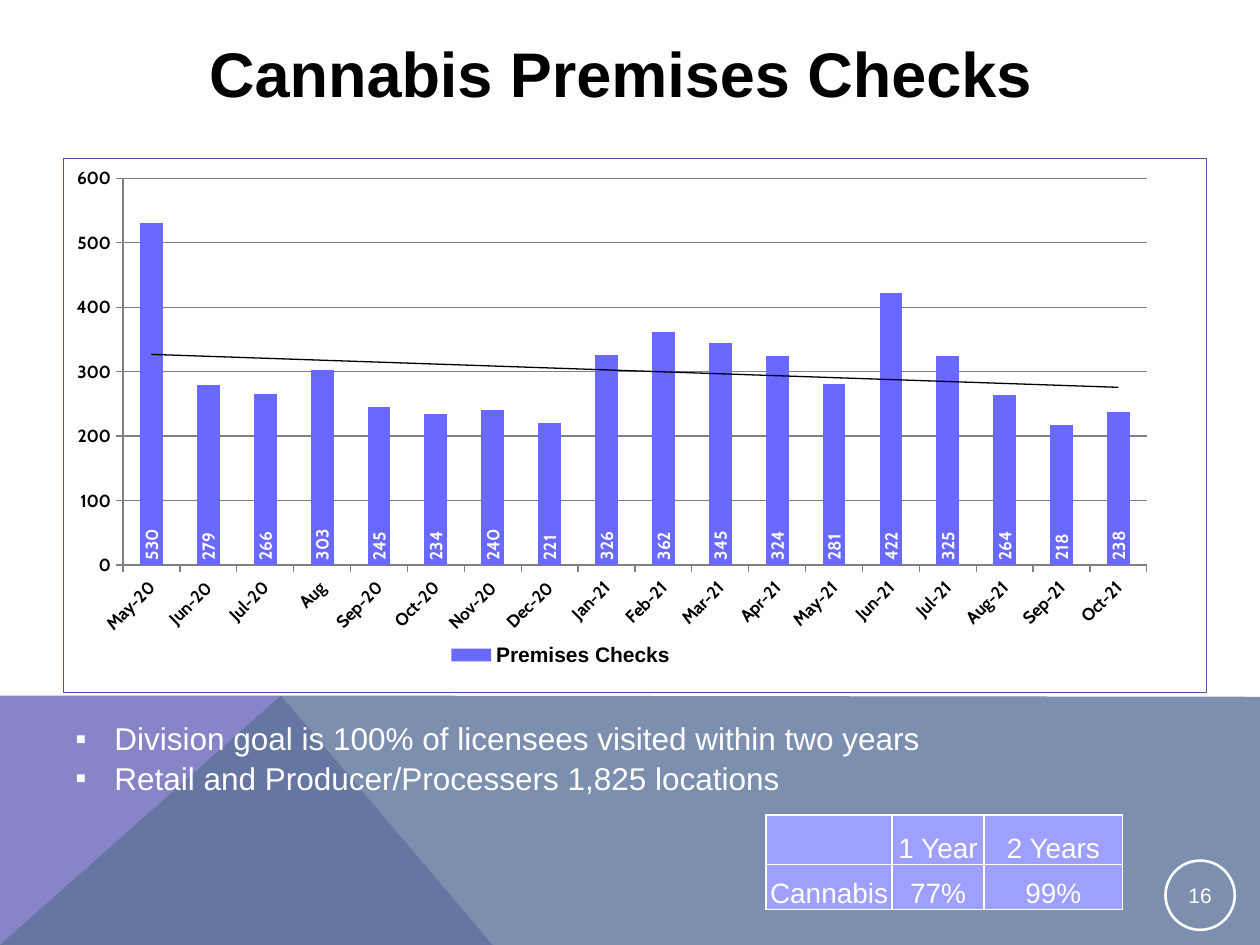
"""Build the cannabis premises checks slide."""
from lxml import etree
from pptx import Presentation
from pptx import util as u
from pptx.chart import data as chart_data
from pptx.dml.color import RGBColor
from pptx.enum import chart as ch, shapes, text
from pptx.oxml import parse_xml
from pptx.oxml.ns import nsdecls, qn

COLORS = {
    "black": "000000", "white": "FFFFFF", "violet": "8784C7", "slate": "5D739A",
    "bar": "6969FF", "cell": "9F9FFF", "border": "524EAB", "grid": "808080",
}
MONTHS = ["May-20", "Jun-20", "Jul-20", "Aug", "Sep-20", "Oct-20", "Nov-20", "Dec-20", "Jan-21",
          "Feb-21", "Mar-21", "Apr-21", "May-21", "Jun-21", "Jul-21", "Aug-21", "Sep-21", "Oct-21"]
CHECKS = [530, 279, 266, 303, 245, 234, 240, 221, 326, 362, 345, 324, 281, 422, 325, 264, 218, 238]
GOALS = ["Division goal is 100% of licensees visited within two years",
         "Retail and Producer/Processers 1,825 locations"]
RATES = [["", "1 Year", "2 Years"], ["Cannabis", "77%", "99%"]]


def color(name):
    return RGBColor.from_string(COLORS[name])


def style_font(font, size, tone, bold=False, name="Arial"):
    font.size, font.bold, font.name = u.Pt(size), bold, name
    font.color.rgb = color(tone)


def write(para, words, size=18, tone="white", bold=False, align=text.PP_ALIGN.CENTER):
    para.alignment = align
    span = para.add_run()
    span.text = words
    style_font(span.font, size, tone, bold)


def set_margins(holder, side, bottom):
    holder.margin_left = holder.margin_right = holder.margin_top = u.Inches(side)
    holder.margin_bottom = u.Inches(bottom)


def rotate_text(part, degrees):
    body = part.find(qn("c:txPr")).find(qn("a:bodyPr"))
    body.set("rot", str(degrees * 60000))
    body.set("vert", "horz")


def chart_layout(x, y, w, h, inner=False):
    target = '<c:layoutTarget val="inner"/>' if inner else ""
    modes = '<c:xMode val="edge"/><c:yMode val="edge"/>'
    sizes = "".join(f'<c:{key} val="{value}"/>' for key, value in zip("xywh", (x, y, w, h)))
    return parse_xml(f'<c:layout {nsdecls("c")}><c:manualLayout>{target}{modes}{sizes}'
                     '</c:manualLayout></c:layout>')


class SlideBuilder:
    """Hold the deck style and the current slide."""

    def __init__(self):
        self.deck = Presentation()
        self.deck.slide_width, self.deck.slide_height = u.Inches(10), u.Inches(7.5)
        self.page = self.deck.slides.add_slide(self.deck.slide_layouts[5])

    def title(self, words, *place):
        box = self.page.shapes.title
        box.left, box.top, box.width, box.height = map(u.Inches, place)
        box.text_frame.auto_size = text.MSO_AUTO_SIZE.NONE
        box.text_frame.vertical_anchor = text.MSO_ANCHOR.MIDDLE
        write(box.text_frame.paragraphs[0], words, 36, "black", True)

    def polygon(self, points, tone, opacity=100):
        corners = [(u.Inches(x), u.Inches(y)) for x, y in points]
        outline = self.page.shapes.build_freeform(*corners[0])
        outline.add_line_segments(corners[1:], close=True)
        shape = outline.convert_to_shape()
        shape.shadow.inherit = False
        shape.fill.solid()
        shape.fill.fore_color.rgb = color(tone)
        shape.line.fill.background()
        if opacity < 100:
            tint = shape.fill._xPr.find(qn("a:solidFill"))[0]
            etree.SubElement(tint, qn("a:alpha")).set("val", str(opacity * 1000))

    def badge(self, words, *place):
        shape = self.page.shapes.add_shape(shapes.MSO_SHAPE.OVAL, *map(u.Inches, place))
        shape.shadow.inherit = False
        shape.fill.background()
        shape.line.color.rgb, shape.line.width = color("white"), u.Pt(1.5)
        frame = shape.text_frame
        frame.vertical_anchor = text.MSO_ANCHOR.MIDDLE
        set_margins(frame, 0.01, 0.01)
        write(frame.paragraphs[0], words, 12)

    def bullets(self, lines, *place):
        frame = self.page.shapes.add_textbox(*map(u.Inches, place)).text_frame
        frame.word_wrap = True
        for index, line in enumerate(lines):
            para = frame.add_paragraph() if index else frame.paragraphs[0]
            props = para._p.get_or_add_pPr()
            props.set("marL", str(u.Inches(0.31)))
            props.set("indent", str(u.Inches(-0.31)))
            etree.SubElement(props, qn("a:buFont")).set("typeface", "Arial")
            etree.SubElement(props, qn("a:buChar")).set("char", "▪")
            if index:
                para.space_before = u.Pt(1)
            write(para, line, align=text.PP_ALIGN.LEFT)

    def table(self, rows, widths, heights, *place):
        frame = self.page.shapes.add_table(len(rows), len(widths), *map(u.Inches, place))
        grid = frame.table
        grid.first_row = grid.horz_banding = False
        for column, width in zip(grid.columns, widths):
            column.width = u.Inches(width)
        for row, height, values in zip(grid.rows, heights, rows):
            row.height = u.Inches(height)
            for cell, value in zip(row.cells, values):
                self.cell(cell, value)

    def cell(self, cell, value):
        cell.vertical_anchor = text.MSO_ANCHOR.BOTTOM
        set_margins(cell, 0.01, 0)
        if value:
            write(cell.text_frame.paragraphs[0], value, 16)
        props = cell._tc.get_or_add_tcPr()
        for side in ("lnL", "lnR", "lnT", "lnB"):
            props.append(parse_xml(
                f'<a:{side} {nsdecls("a")} w="12700"><a:solidFill>'
                f'<a:srgbClr val="{COLORS["white"]}"/></a:solidFill></a:{side}>'))
        cell.fill.solid()
        cell.fill.fore_color.rgb = color("cell")

    def chart(self, name, months, values, *place):
        data = chart_data.CategoryChartData()
        data.categories = months
        data.add_series(name, values)
        chart = self.page.shapes.add_chart(
            ch.XL_CHART_TYPE.COLUMN_CLUSTERED, *map(u.Inches, place), data).chart
        style_font(chart.font, 10, "black", name="Cabin")
        chart.has_title = False
        self.axes(chart)
        self.series(chart.plots[0])
        self.legend(chart)
        area = chart._chartSpace.chart.plotArea
        for old in area.findall(qn("c:layout")):
            area.remove(old)
        area.insert(0, chart_layout(0.052, 0.038, 0.896, 0.724, inner=True))
        chart._chartSpace.chart.addnext(parse_xml(
            f'<c:spPr {nsdecls("c", "a")}><a:noFill/><a:ln w="9525"><a:solidFill>'
            f'<a:srgbClr val="{COLORS["border"]}"/></a:solidFill></a:ln></c:spPr>'))

    def axes(self, chart):
        for axis in (chart.category_axis, chart.value_axis):
            style_font(axis.tick_labels.font, 10, "black", True, "Cabin")
            axis.major_tick_mark = ch.XL_TICK_MARK.OUTSIDE
            axis.format.line.color.rgb = color("grid")
        rotate_text(chart.category_axis._element, -45)
        scale = chart.value_axis
        scale.minimum_scale, scale.maximum_scale, scale.major_unit = 0, 600, 100
        scale.major_gridlines.format.line.color.rgb = color("grid")

    def series(self, plot):
        plot.gap_width, plot.vary_by_categories = 150, False
        bars = plot.series[0]
        bars.format.fill.solid()
        bars.format.fill.fore_color.rgb = color("bar")
        labels = bars.data_labels
        labels.show_value = True
        labels.position = ch.XL_LABEL_POSITION.INSIDE_BASE
        style_font(labels.font, 10, "white", True, "Cabin")
        rotate_text(labels._element, -90)
        bars._element.find(qn("c:cat")).addprevious(parse_xml(
            f'<c:trendline {nsdecls("c", "a")}><c:spPr><a:ln w="9525"><a:solidFill>'
            f'<a:srgbClr val="{COLORS["black"]}"/></a:solidFill></a:ln></c:spPr>'
            '<c:trendlineType val="linear"/><c:dispRSqr val="0"/><c:dispEq val="0"/></c:trendline>'))

    def legend(self, chart):
        chart.has_legend = True
        legend = chart.legend
        legend.position = ch.XL_LEGEND_POSITION.BOTTOM
        legend.include_in_layout = False
        style_font(legend.font, 12, "black", True)
        for old in legend._element.findall(qn("c:layout")):
            legend._element.remove(old)
        position = legend._element.find(qn("c:legendPos"))
        position.addnext(chart_layout(0.33, 0.9, 0.21, 0.07))
        position.addnext(parse_xml(f'<c:legendEntry {nsdecls("c")}><c:idx val="1"/>'
                                   '<c:delete val="1"/></c:legendEntry>'))


def main():
    slide = SlideBuilder()
    slide.polygon([(0, 7.5), (0, 5.52), (2.23, 5.52), (3.91, 7.5)], "violet")
    slide.polygon([(0, 7.5), (2.23, 5.52), (10, 5.53), (10, 7.5)], "slate", opacity=80)
    slide.title("Cannabis Premises Checks ", 0.58, 0.4, 8.83, 0.35)
    slide.badge("16", 9.25, 6.83, 0.55, 0.55)
    slide.chart("Premises Checks", MONTHS, CHECKS, 0.5, 1.25, 9.08, 4.25)
    slide.bullets(GOALS, 0.5, 5.66, 9.08, 0.94)
    slide.table(RATES, [1, 0.73, 1.1], [0.39, 0.36], 6.08, 6.47, 2.83, 0.75)
    slide.deck.save("out.pptx")


if __name__ == "__main__":
    main()
